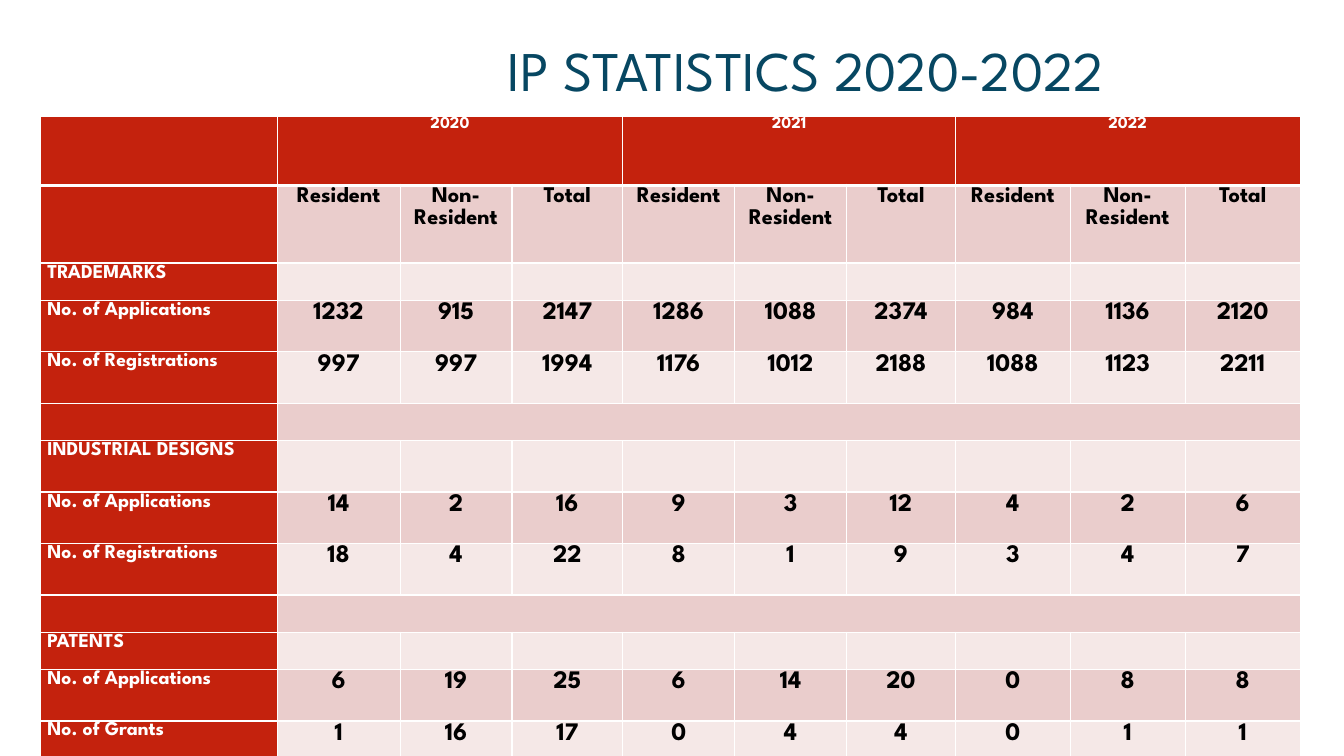
from lxml import etree
from pptx import Presentation
from pptx.dml.color import RGBColor
from pptx.enum.text import MSO_ANCHOR, PP_ALIGN
from pptx.oxml.ns import qn
from pptx.util import Pt

CENTER, LEFT = PP_ALIGN.CENTER, PP_ALIGN.LEFT
MIDDLE = MSO_ANCHOR.MIDDLE
FONT = "League Spartan"
COLORS = {"title": "074762", "red": "C4220D", "band_dark": "EACDCC",
          "band_light": "F5E8E7", "white": "FFFFFF", "black": "000000"}

COLUMN_WIDTHS = [169.2, 87.8, 79.9, 79.2, 79.9, 79.9, 77.8, 82.1, 82.1, 82.1]
YEARS = ["2020", "2021", "2022"]
MEASURES = ["Resident", "Non-Resident", "Total"]
SHORT, TALL = 26.6, 36.8

# Each row: height, label, values
ROWS = [
    (49.7, "", [text for year in YEARS for text in (year, "", "")]),
    (55.4, "", MEASURES * len(YEARS)),
    (SHORT, "TRADEMARKS", []),
    (TALL, "No. of Applications", [1232, 915, 2147, 1286, 1088, 2374, 984, 1136, 2120]),
    (TALL, "No. of Registrations", [997, 997, 1994, 1176, 1012, 2188, 1088, 1123, 2211]),
    (SHORT, "", []),
    (TALL, "INDUSTRIAL DESIGNS", []),
    (TALL, "No. of Applications", [14, 2, 16, 9, 3, 12, 4, 2, 6]),
    (TALL, "No. of Registrations", [18, 4, 22, 8, 1, 9, 3, 4, 7]),
    (SHORT, "", []),
    (SHORT, "PATENTS", []),
    (TALL, "No. of Applications", [6, 19, 25, 6, 14, 20, 0, 8, 8]),
    (SHORT, "No. of Grants", [1, 16, 17, 0, 4, 4, 0, 1, 1]),
]


def style_text(paragraph, size, color, align, spacing):
    paragraph.alignment = align
    paragraph.line_spacing = spacing
    paragraph.font.name = FONT
    paragraph.font.size = Pt(size)
    paragraph.font.color.rgb = RGBColor.from_string(COLORS[color])


def add_borders(cell, top, bottom):
    """Draw white cell borders; top and bottom are line widths in points."""
    properties = cell._tc.get_or_add_tcPr()
    for side, width in (("L", 1), ("R", 1), ("T", top), ("B", bottom)):
        line = etree.SubElement(properties, qn(f"a:ln{side}"), w=str(Pt(width)))
        fill = etree.SubElement(line, qn("a:solidFill"))
        etree.SubElement(fill, qn("a:srgbClr"), val=COLORS["white"])


prs = Presentation()
prs.slide_width, prs.slide_height = Pt(960), Pt(540)
slide = prs.slides.add_slide(prs.slide_layouts[5])

title = slide.shapes.title
title.left, title.top, title.width, title.height = Pt(82.8), Pt(21.6), Pt(840.2), Pt(61.2)
title.text_frame.text = "IP STATISTICS 2020-2022"
title.text_frame.vertical_anchor = MIDDLE
title.text_frame.margin_left = Pt(153)
style_text(title.text_frame.paragraphs[0], 40, "title", CENTER, 0.9)

table = slide.shapes.add_table(
    len(ROWS), len(COLUMN_WIDTHS), Pt(28.8), Pt(82.8),
    Pt(sum(COLUMN_WIDTHS)), Pt(sum(height for height, _, _ in ROWS))).table
for column, width in zip(table.columns, COLUMN_WIDTHS):
    column.width = Pt(width)

for r, (height, label, values) in enumerate(ROWS):
    table.rows[r].height = Pt(height)
    texts = [label] + (values or [""] * 9)
    band = "band_dark" if r % 2 else "band_light"
    value_size = {0: 12, 1: 16}.get(r, 18)
    for c, text in enumerate(texts):
        cell = table.cell(r, c)
        on_red = r == 0 or c == 0
        cell.margin_left = cell.margin_right = Pt(5)
        cell.margin_top = cell.margin_bottom = 0
        add_borders(cell, top=3 if r == 1 else 1, bottom=3 if r == 0 else 1)
        cell.fill.solid()
        cell.fill.fore_color.rgb = RGBColor.from_string(COLORS["red" if on_red else band])
        cell.text = str(text)
        paragraph = cell.text_frame.paragraphs[0]
        style_text(paragraph, value_size if c else 14, "white" if on_red else "black",
                   CENTER if c else LEFT, 1.07)
        paragraph.font.bold = True
    if not label and not values:
        table.cell(r, 1).merge(table.cell(r, 9))

for first in (1, 4, 7):
    table.cell(0, first).merge(table.cell(0, first + 2))

prs.save("out.pptx")
